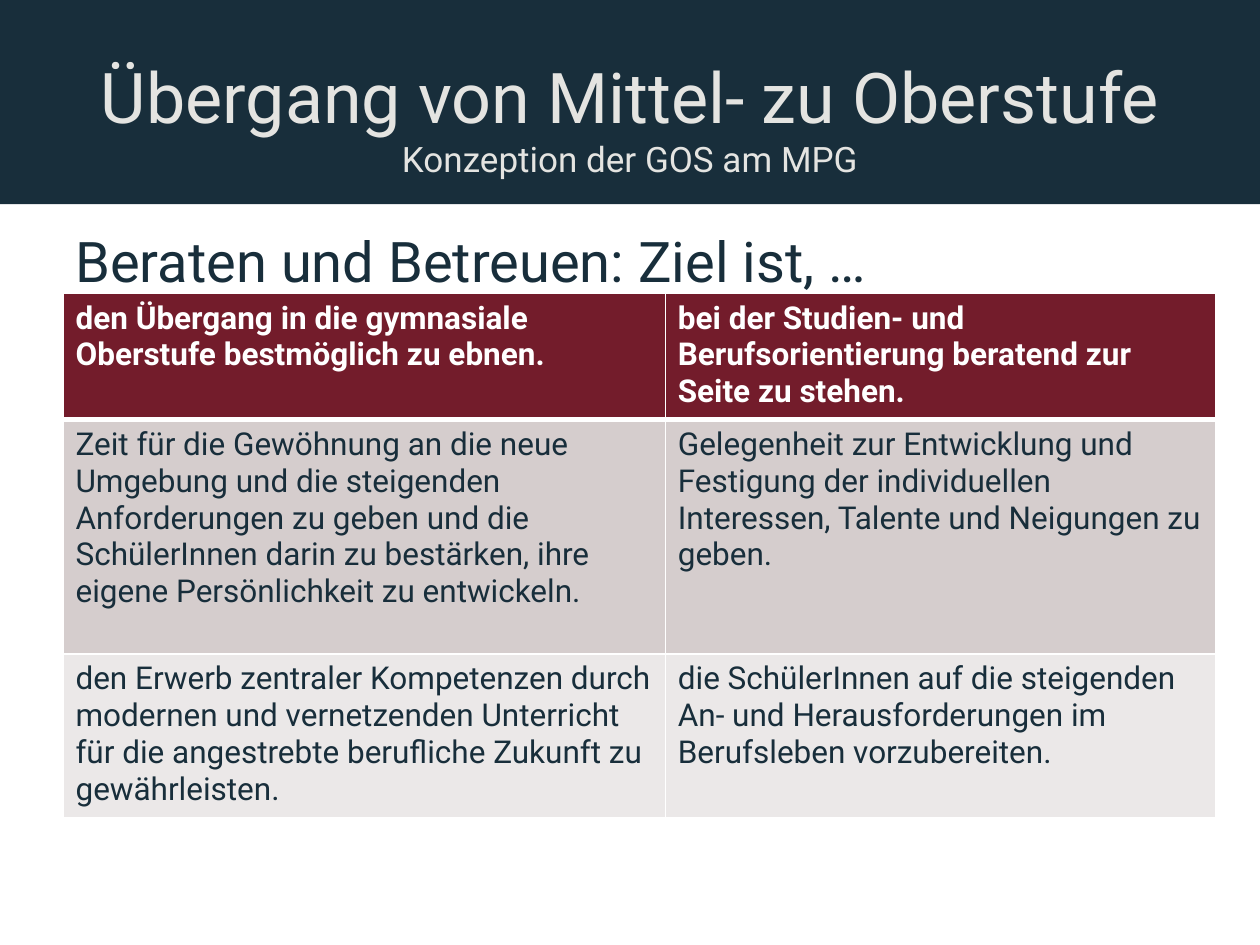
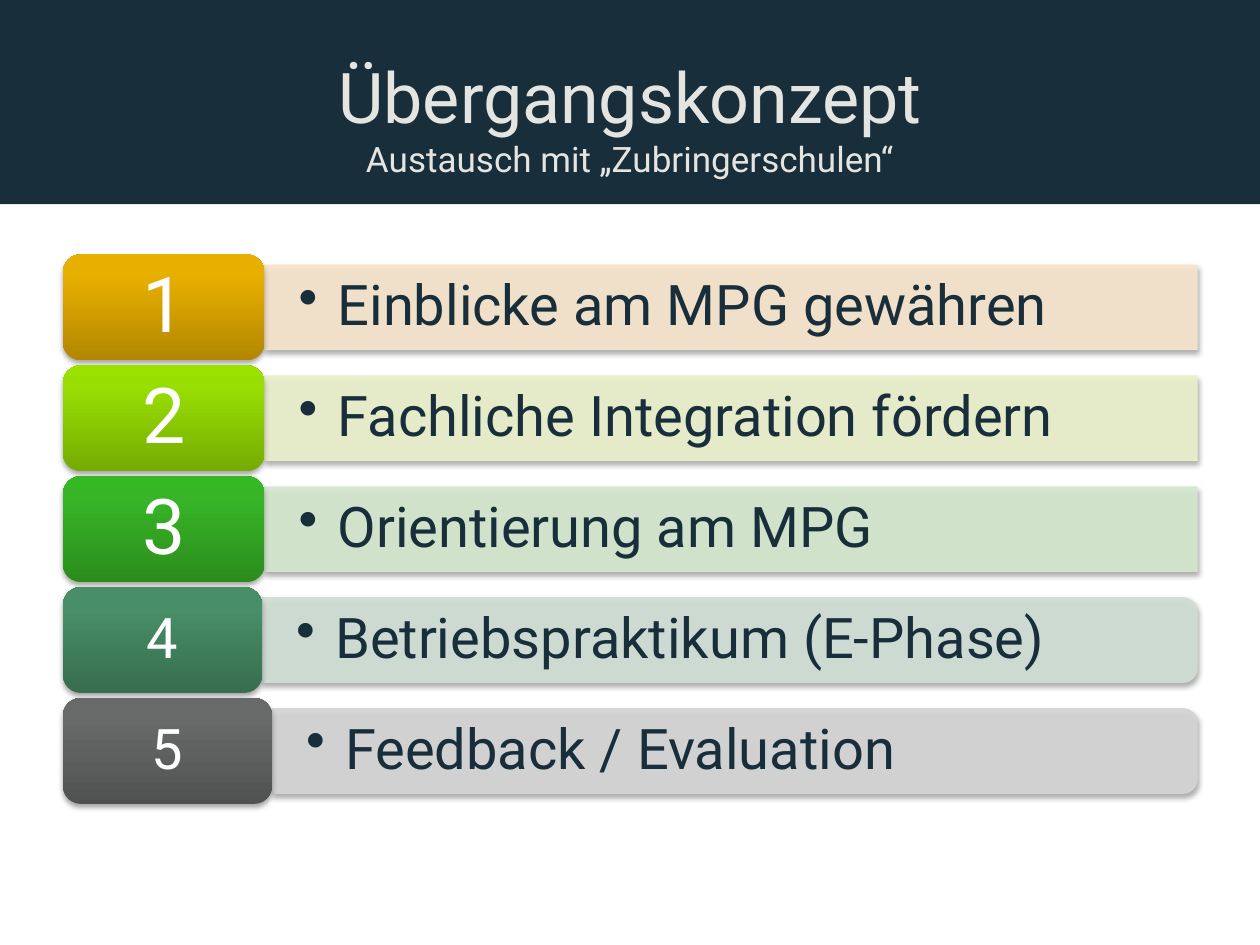
"""Build two slides on the transition from middle to upper school."""
from copy import deepcopy
from dataclasses import dataclass

from lxml import etree
from pptx import Presentation
from pptx.dml.color import RGBColor
from pptx.enum.shapes import MSO_SHAPE
from pptx.enum.text import MSO_ANCHOR, PP_ALIGN
from pptx.oxml.ns import qn
from pptx.util import Inches, Pt

RECTANGLE = MSO_SHAPE.RECTANGLE
ROUNDED = MSO_SHAPE.ROUNDED_RECTANGLE
ROUNDED_END = MSO_SHAPE.ROUND_2_SAME_RECTANGLE
MIDDLE = MSO_ANCHOR.MIDDLE
CENTER = PP_ALIGN.CENTER

COLORS = {
    "navy": "182E3B", "title": "E4E4E1", "white": "FFFFFF", "black": "000000",
    "header": "731C2B", "row_dark": "D5CDCD", "row_light": "EBE8E8",
}
FONT = "Roboto"
BLANK_LAYOUT = 6

COLUMN_WIDTHS = (4.78, 4.37)
ROW_HEIGHTS = (0.97, 1.86, 1.27)
ROW_FILLS = ("header", "row_dark", "row_light")
GOALS = (
    ("den Übergang in die gymnasiale Oberstufe bestmöglich zu ebnen.",
     "bei der Studien- und Berufsorientierung beratend zur Seite zu stehen."),
    ("Zeit für die Gewöhnung an die neue Umgebung und die steigenden Anforderungen zu geben "
     "und die SchülerInnen darin zu bestärken, ihre eigene Persönlichkeit zu entwickeln.",
     "Gelegenheit zur Entwicklung und Festigung der individuellen Interessen, Talente und "
     "Neigungen zu geben."),
    ("den Erwerb zentraler Kompetenzen durch modernen und vernetzenden Unterricht für die "
     "angestrebte berufliche Zukunft zu gewährleisten.",
     "die SchülerInnen auf die steigenden An- und Herausforderungen im Berufsleben "
     "vorzubereiten."),
)

STEP_LEFT, STEP_TOP, STEP_PITCH = 0.5, 2.02, 0.88
BADGE_HEIGHT, BAR_HEIGHT, BAR_RIGHT = 0.84, 0.67, 9.5


@dataclass
class Step:
    """One numbered step with its badge gradient and bar colour."""
    label: str
    gradient: tuple[str, str, str]
    bar_color: str
    badge_width: float = 1.6
    number_size: int = 44
    bar_shape: int = RECTANGLE


STEPS = (
    Step("Einblicke am MPG gewähren", ("B28700", "E7AF00", "E8B000"), "F8E5CC"),
    Step("Fachliche Integration fördern", ("75AB02", "98DE03", "9AE200"), "EBF1CC"),
    Step("Orientierung am MPG", ("2B8C1D", "37B526", "35B923"), "D4E9CE"),
    Step("Betriebspraktikum (E-Phase)", ("376E4F", "488E67", "479067"), "D1DFD6",
         1.58, 32, ROUNDED_END),
    Step("Feedback / Evaluation", ("505151", "686969", "686969"), "D5D5D5",
         1.66, 32, ROUNDED_END),
)


def set_format(target, values: dict) -> None:
    """Set every named attribute on the target."""
    for name, value in values.items():
        setattr(target, name, value)


def set_margins(frame, horizontal: float, vertical: float) -> None:
    """Set equal side and equal top and bottom margins."""
    set_format(frame, {
        "margin_left": Inches(horizontal), "margin_right": Inches(horizontal),
        "margin_top": Inches(vertical), "margin_bottom": Inches(vertical),
    })


def add_run(paragraph, text: str, size: int, color: str, bold: bool = False) -> None:
    """Append a run in the shared font."""
    run = paragraph.add_run()
    run.text = text
    set_format(run.font, {"name": FONT, "size": Pt(size), "bold": bold})
    run.font.color.rgb = RGBColor.from_string(COLORS[color])


def add_text_box(slide, left: float, top: float, width: float, height: float):
    """Add a wrapping text box and return its text frame."""
    box = slide.shapes.add_textbox(Inches(left), Inches(top), Inches(width), Inches(height))
    box.text_frame.word_wrap = True
    return box.text_frame


def add_plain_shape(slide, kind: int, left: float, top: float, width: float, height: float):
    """Add a preset shape without line or shadow."""
    shape = slide.shapes.add_shape(kind, Inches(left), Inches(top), Inches(width), Inches(height))
    shape.shadow.inherit = False
    shape.line.fill.background()
    return shape


def add_soft_shadow(shape) -> None:
    """Give the shape a soft shadow that falls straight down."""
    effects = shape._element.spPr.find(qn("a:effectLst"))
    shadow = etree.SubElement(effects, qn("a:outerShdw"), {
        "blurRad": str(Pt(3.1)), "dist": str(Pt(1.8)), "dir": "5400000", "rotWithShape": "0"})
    color = etree.SubElement(shadow, qn("a:srgbClr"), val=COLORS["black"])
    etree.SubElement(color, qn("a:alpha"), val="35000")


def add_titled_slide(presentation, title: str, subtitle: str):
    """Add a slide with the dark band, title and subtitle."""
    slide = presentation.slides.add_slide(presentation.slide_layouts[BLANK_LAYOUT])
    band = add_plain_shape(slide, RECTANGLE, 0, 0, 10, 1.62)
    band.fill.solid()
    band.fill.fore_color.rgb = RGBColor.from_string(COLORS["navy"])
    frame = add_text_box(slide, 0.5, 0.3, 9, 1.25)
    frame.vertical_anchor = MIDDLE
    paragraph = frame.paragraphs[0]
    paragraph.alignment = CENTER
    add_run(paragraph, title, 40, "title")
    paragraph.add_line_break()
    add_run(paragraph, subtitle, 20, "title")
    return slide


def set_borders(cell, widths: dict[str, float]) -> None:
    """Draw white cell borders with the given widths in points."""
    properties = cell._tc.get_or_add_tcPr()
    for side, width in widths.items():
        line = etree.SubElement(properties, qn(f"a:ln{side}"), w=str(Pt(width)))
        fill = etree.SubElement(line, qn("a:solidFill"))
        etree.SubElement(fill, qn("a:srgbClr"), val=COLORS["white"])


def add_goal_table(slide) -> None:
    """Add the table of goals."""
    table = slide.shapes.add_table(
        len(ROW_HEIGHTS), len(COLUMN_WIDTHS), Inches(0.5), Inches(2.33),
        Inches(sum(COLUMN_WIDTHS)), Inches(sum(ROW_HEIGHTS))).table
    set_format(table, {"first_row": False, "horz_banding": False})
    for column, width in zip(table.columns, COLUMN_WIDTHS):
        column.width = Inches(width)
    for index, (row, height) in enumerate(zip(table.rows, ROW_HEIGHTS)):
        row.height = Inches(height)
        is_header = index == 0
        widths = {"L": 1, "R": 1, "T": 3 if index == 1 else 1, "B": 3 if is_header else 1}
        for cell, text in zip(row.cells, GOALS[index]):
            set_borders(cell, widths)
            cell.fill.solid()
            cell.fill.fore_color.rgb = RGBColor.from_string(COLORS[ROW_FILLS[index]])
            add_run(cell.text_frame.paragraphs[0], text, 18,
                    "white" if is_header else "navy", is_header)


def add_bar(slide, step: Step, left: float, middle: float) -> None:
    """Add the translucent bar of a step, turned so its top faces right."""
    length = BAR_RIGHT - left
    bar = add_plain_shape(slide, step.bar_shape, left + (length - BAR_HEIGHT) / 2,
                          middle - length / 2, BAR_HEIGHT, length)
    bar.rotation = 90
    bar.line.width = Pt(0.75)
    for fill in (bar.fill, bar.line.fill):
        fill.solid()
        fill.fore_color.rgb = RGBColor.from_string(step.bar_color)
    for color in bar._element.spPr.iter(qn("a:srgbClr")):
        etree.SubElement(color, qn("a:alpha"), val="90000")
    add_soft_shadow(bar)


def add_label(slide, text: str, left: float, middle: float) -> None:
    """Add the bulleted label of a step."""
    frame = add_text_box(slide, left, middle - BAR_HEIGHT / 2, BAR_RIGHT - left, BAR_HEIGHT)
    frame.vertical_anchor = MIDDLE
    set_margins(frame, 0.27, 0.14)
    paragraph = frame.paragraphs[0]
    paragraph.line_spacing = 0.9
    properties = paragraph._p.get_or_add_pPr()
    properties.set("marL", str(Inches(0.31)))
    properties.set("indent", str(Inches(-0.31)))
    etree.SubElement(properties, qn("a:buChar"), char="•")
    add_run(paragraph, text, 32, "navy")


def add_badge(slide, step: Step, number: int, top: float) -> None:
    """Add the numbered gradient badge of a step."""
    badge = add_plain_shape(slide, ROUNDED, STEP_LEFT, top, step.badge_width, BADGE_HEIGHT)
    badge.fill.gradient()
    badge.fill.gradient_angle = 90
    stop_list = next(badge._element.spPr.iter(qn("a:gsLst")))
    stop_list.append(deepcopy(stop_list[0]))
    for stop, position, color in zip(badge.fill.gradient_stops, (0, 0.8, 1), step.gradient):
        stop.color.rgb = RGBColor.from_string(color)
        stop.position = position
    add_soft_shadow(badge)
    frame = badge.text_frame
    frame.vertical_anchor = MIDDLE
    set_margins(frame, 0.18, 0.09)
    paragraph = frame.paragraphs[0]
    set_format(paragraph, {"alignment": CENTER, "line_spacing": 0.9})
    add_run(paragraph, str(number), step.number_size, "white")


def add_step(slide, step: Step, number: int) -> None:
    """Add one row of the step list."""
    top = STEP_TOP + (number - 1) * STEP_PITCH
    middle = top + BADGE_HEIGHT / 2
    bar_left = STEP_LEFT + step.badge_width
    add_bar(slide, step, bar_left, middle)
    add_label(slide, step.label, bar_left, middle)
    add_badge(slide, step, number, top)


def main() -> None:
    """Build and save the presentation."""
    presentation = Presentation()
    set_format(presentation, {"slide_width": Inches(10), "slide_height": Inches(7.5)})

    goals = add_titled_slide(presentation, "Übergang von Mittel- zu Oberstufe",
                             "Konzeption der GOS am MPG")
    heading = add_text_box(goals, 0.5, 1.75, 9.3, 0.6)
    add_run(heading.paragraphs[0], "Beraten und Betreuen: Ziel ist, …", 32, "navy")
    add_goal_table(goals)

    concept = add_titled_slide(presentation, "Übergangskonzept",
                               "Austausch mit „Zubringerschulen“")
    for number, step in enumerate(STEPS, 1):
        add_step(concept, step, number)

    presentation.save("out.pptx")


if __name__ == "__main__":
    main()
